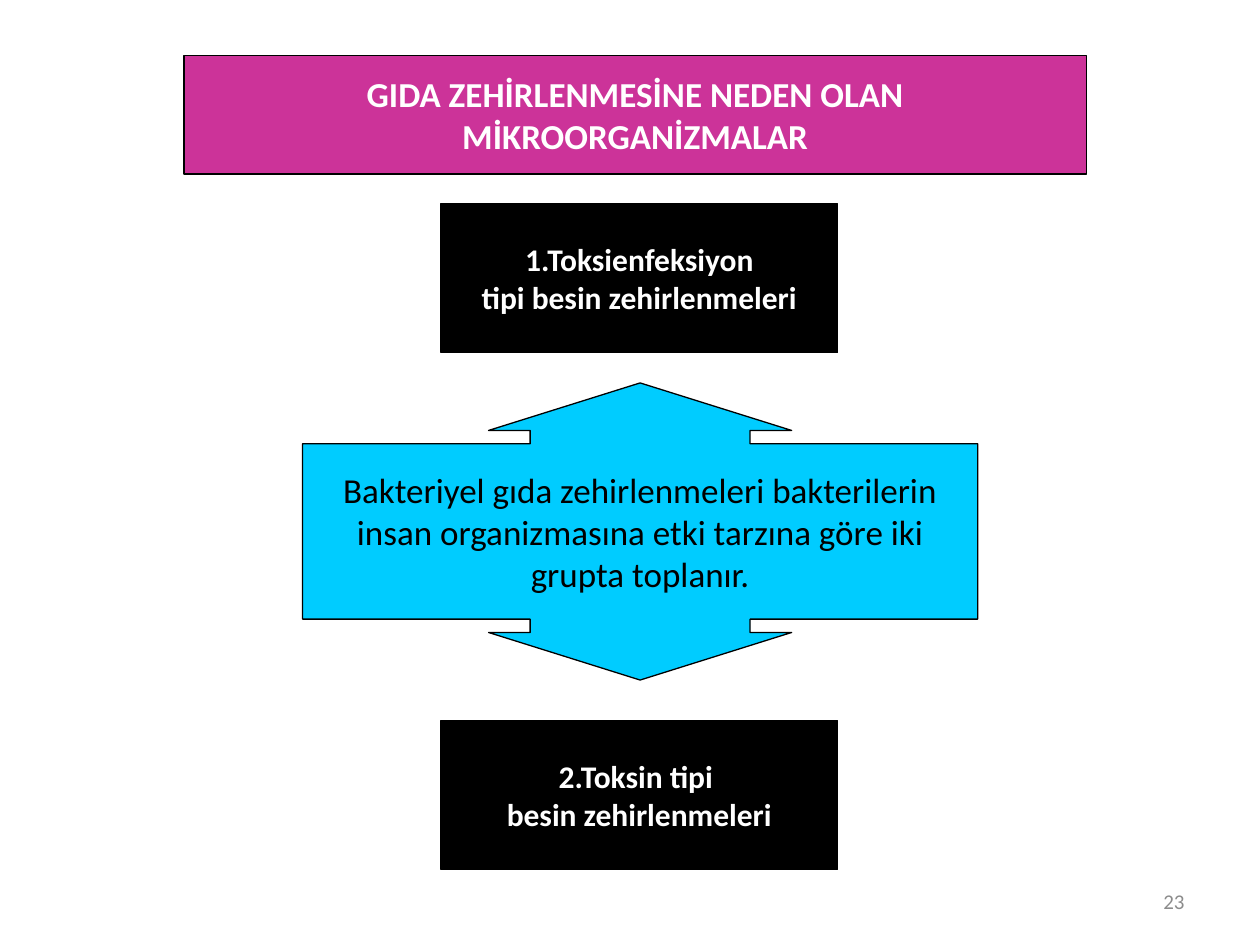
from dataclasses import dataclass

from pptx import Presentation
from pptx.dml.color import RGBColor
from pptx.enum.shapes import MSO_SHAPE as Shape
from pptx.enum.text import MSO_ANCHOR as Anchor, MSO_AUTO_SIZE as AutoSize, PP_ALIGN as Align
from pptx.util import Cm, Pt


@dataclass(frozen=True)
class Theme:
    font: str = "Calibri"
    black: str = "000000"
    white: str = "FFFFFF"
    magenta: str = "CC3399"
    cyan: str = "00CCFF"
    grey: str = "8C8C8C"
    heading: int = 20
    label: int = 18
    small: int = 12
    outline: float = 0.75


THEME = Theme()


def paint(shape, fill):
    """Give a shape a solid fill and the thin black outline."""
    shape.fill.solid()
    shape.fill.fore_color.rgb = RGBColor.from_string(fill)
    shape.line.color.rgb = RGBColor.from_string(THEME.black)
    shape.line.width = Pt(THEME.outline)


def write(shape, text, size, color, bold=False, align=Align.CENTER, wrap=True):
    """Set the text, one paragraph a line, and format every run."""
    frame = shape.text_frame
    frame.text = text
    frame.auto_size = AutoSize.NONE
    frame.word_wrap = wrap
    frame.vertical_anchor = Anchor.MIDDLE
    for para in frame.paragraphs:
        para.alignment = align
        for span in para.runs:
            span.font.name = THEME.font
            span.font.size = Pt(size)
            span.font.bold = bold
            span.font.color.rgb = RGBColor.from_string(color)


def add_title(page, text):
    title = page.shapes.title
    title.left, title.top, title.width, title.height = Cm(3.71), Cm(1.12), Cm(18.19), Cm(2.39)
    paint(title, THEME.magenta)
    write(title, text, THEME.heading, THEME.white, bold=True, wrap=False)


def add_block(page, kind, left, top, width, height, fill):
    block = page.shapes.add_shape(kind, Cm(left), Cm(top), Cm(width), Cm(height))
    block.shadow.inherit = False
    paint(block, fill)
    return block


def add_group_box(page, top, text):
    box = add_block(page, Shape.RECTANGLE, 8.89, top, 8, 3, THEME.black)
    write(box, text, THEME.label, THEME.white, bold=True)
    return box


def hang_indent(box, indent):
    for para in box.text_frame.paragraphs:
        properties = para._p.get_or_add_pPr()
        properties.set("marL", str(int(indent)))
        properties.set("indent", str(-int(indent)))


def add_callout(page, text):
    callout = add_block(page, Shape.UP_DOWN_ARROW_CALLOUT, 6.1, 7.72, 13.61, 5.99, THEME.cyan)
    # Shaft width, head half-width, head length, body height
    for index, value in enumerate((0.74, 0.51, 0.16, 0.59)):
        callout.adjustments[index] = value
    write(callout, text, THEME.heading, THEME.black)


def add_page_number(page, number):
    box = page.shapes.add_textbox(Cm(18.21), Cm(17.65), Cm(5.92), Cm(1.02))
    write(box, number, THEME.small, THEME.grey, align=Align.RIGHT)


def main():
    deck = Presentation()
    deck.slide_width, deck.slide_height = Cm(25.4), Cm(19.05)
    page = deck.slides.add_slide(deck.slide_layouts[5])

    # Heading
    add_title(page, "GIDA ZEHİRLENMESİNE NEDEN OLAN\nMİKROORGANİZMALAR")

    # The two groups, below and above the callout
    toxin_box = add_group_box(page, 14.53, "2.Toksin tipi \nbesin zehirlenmeleri")
    hang_indent(toxin_box, Cm(0.95))
    add_group_box(page, 4.11, "1.Toksienfeksiyon\ntipi besin zehirlenmeleri")

    # Callout pointing at both groups
    add_callout(page, "Bakteriyel gıda zehirlenmeleri bakterilerin insan organizmasına "
                      "etki tarzına göre iki grupta toplanır.")

    # Footer
    add_page_number(page, "23")

    deck.save("out.pptx")


if __name__ == "__main__":
    main()
